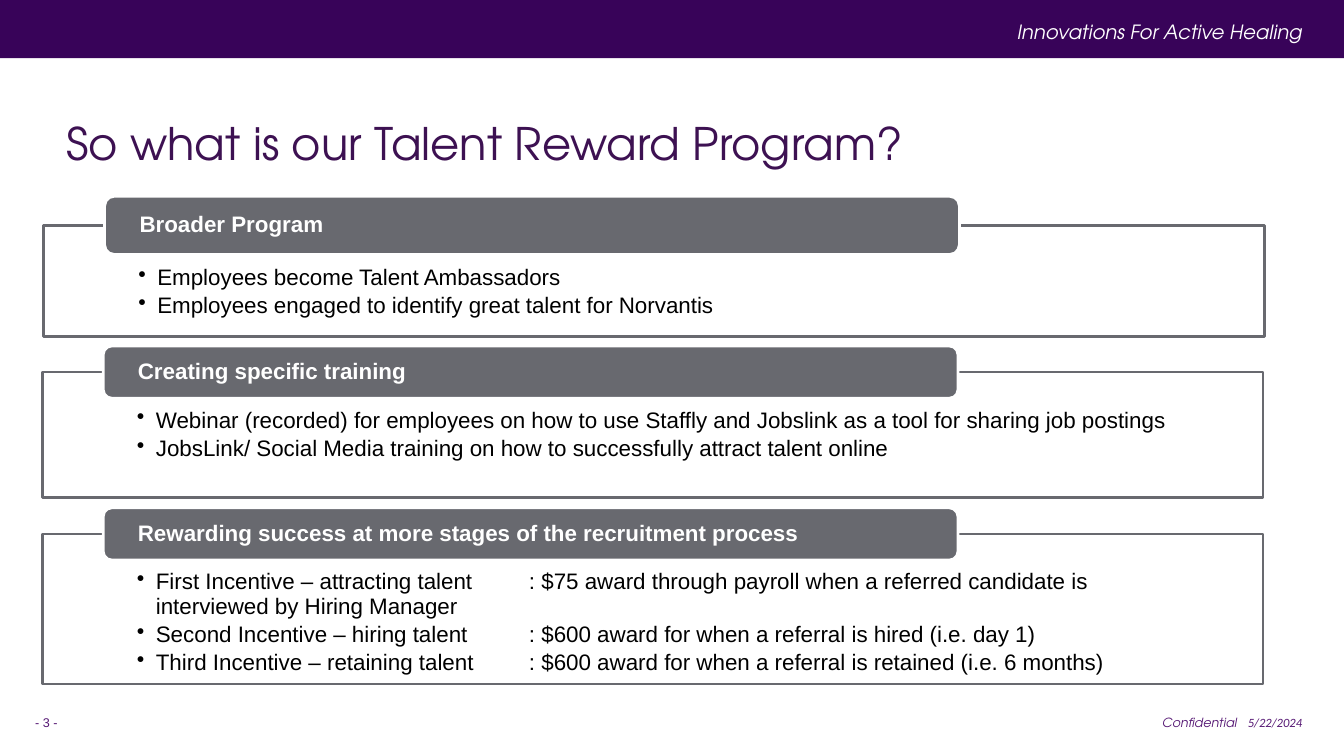
from dataclasses import dataclass

from lxml import etree
from pptx import Presentation
from pptx.dml.color import RGBColor
from pptx.enum.shapes import MSO_SHAPE
from pptx.enum.text import MSO_ANCHOR, PP_ALIGN
from pptx.oxml.ns import qn
from pptx.util import Pt

RECT, ROUNDED = MSO_SHAPE.RECTANGLE, MSO_SHAPE.ROUNDED_RECTANGLE
TOP, MIDDLE = MSO_ANCHOR.TOP, MSO_ANCHOR.MIDDLE
LEFT, RIGHT = PP_ALIGN.LEFT, PP_ALIGN.RIGHT


@dataclass(frozen=True)
class Theme:
    banner: str = "380359"
    title: str = "3D1152"
    footer: str = "561874"
    gray: str = "68696F"
    white: str = "FFFFFF"
    black: str = "000000"
    display: str = "TeX Gyre Adventor"
    body: str = "Arial"
    date: str = "Calibri"
    title_size: float = 32
    body_size: float = 16
    tagline_size: float = 14
    footer_size: float = 9


class SlideBuilder:
    def __init__(self, slide, theme):
        self.slide, self.theme = slide, theme

    def block(self, kind, box, fill, line=None):
        """Draw a flat shape with an optional two-point outline."""
        shape = self.slide.shapes.add_shape(kind, *map(Pt, box))
        shape.shadow.inherit = False
        shape.fill.solid()
        shape.fill.fore_color.rgb = RGBColor.from_string(fill)
        if line:
            shape.line.color.rgb = RGBColor.from_string(line)
            shape.line.width = Pt(2)
        else:
            shape.line.fill.background()
        return shape

    def frame(self, shape, anchor, margins=(7.2, 3.6, 7.2, 3.6), wrap=True):
        left, top, right, bottom = map(Pt, margins)
        formats = {
            "word_wrap": wrap, "vertical_anchor": anchor,
            "margin_left": left, "margin_top": top,
            "margin_right": right, "margin_bottom": bottom,
        }
        for name, value in formats.items():
            setattr(shape.text_frame, name, value)
        return shape.text_frame

    def add_words(self, paragraph, text, size, color, font, align=LEFT, **styles):
        paragraph.alignment = align
        run = paragraph.add_run()
        run.text = text
        for name, value in {"size": Pt(size), "name": font, **styles}.items():
            setattr(run.font, name, value)
        run.font.color.rgb = RGBColor.from_string(color)

    def label(self, box, text, size, color, font, anchor=MIDDLE, wrap=True, **styles):
        """Place a single line of free text."""
        shape = self.slide.shapes.add_textbox(*map(Pt, box))
        frame = self.frame(shape, anchor, wrap=wrap)
        self.add_words(frame.paragraphs[0], text, size, color, font, **styles)

    def bullet(self, paragraph, text):
        theme = self.theme
        paragraph.line_spacing = 0.9
        paragraph.space_after = Pt(3)
        props = paragraph._p.get_or_add_pPr()
        props.set("marL", str(Pt(13.5)))
        props.set("indent", str(Pt(-13.5)))
        etree.SubElement(props, qn("a:buChar"), char="•")
        if "\t" in text:
            stops = etree.SubElement(props, qn("a:tabLst"))
            etree.SubElement(stops, qn("a:tab"), pos=str(Pt(280)), algn="l")
        self.add_words(paragraph, text, theme.body_size, theme.black, theme.body)

    def section(self, left, top, height, header_height, heading, points):
        """Draw an outlined panel whose header straddles its top edge."""
        theme = self.theme
        panel = self.block(RECT, (left, top, 872, height), theme.white, theme.gray)
        color = panel._element.spPr.find(qn("a:solidFill"))[0]
        etree.SubElement(color, qn("a:alpha"), val="90000")
        frame = self.frame(panel, TOP, (67.7, header_height * 0.7, 67.7, 8.6))
        for index, point in enumerate(points):
            paragraph = frame.add_paragraph() if index else frame.paragraphs[0]
            self.bullet(paragraph, point)

        header_box = (left + 43.5, top - header_height / 2, 610.6, header_height)
        header = self.block(ROUNDED, header_box, theme.gray, theme.white)
        line = self.frame(header, MIDDLE, (23, 0, 23, 0)).paragraphs[0]
        line.line_spacing = 0.9
        self.add_words(line, heading, theme.body_size, theme.white, theme.body, bold=True)


# Left, top, height, header height, heading, points
SECTIONS = [
    (31.2, 161, 79.2, 41.6, "Broader Program", [
        "Employees become Talent Ambassadors",
        "Employees engaged to identify great talent for Norvantis",
    ]),
    (30.2, 265.8, 89.4, 37.4, "Creating specific training", [
        "Webinar (recorded) for employees on how to use Staffly and Jobslink "
        "as a tool for sharing job postings",
        "JobsLink/ Social Media training on how to successfully attract talent online",
    ]),
    (30.2, 381.4, 107.2, 37.4,
     "Rewarding success at more stages of the recruitment process", [
         "First Incentive – attracting talent\t: $75 award through payroll when "
         "a referred candidate is interviewed by Hiring Manager",
         "Second Incentive – hiring talent\t: $600 award for when a referral "
         "is hired (i.e. day 1)",
         "Third Incentive – retaining talent\t: $600 award for when a referral "
         "is retained (i.e. 6 months)",
     ]),
]


def main():
    deck = Presentation()
    deck.slide_width, deck.slide_height = Pt(960), Pt(540)
    theme = Theme()
    page = SlideBuilder(deck.slides.add_slide(deck.slide_layouts[6]), theme)

    # Banner
    page.block(RECT, (0, 0, 960, 41.6), theme.banner)
    page.label((545.8, 10.8, 391.7, 24.2), "Innovations For Active Healing",
               theme.tagline_size, theme.white, theme.display,
               anchor=TOP, align=RIGHT, italic=True)

    # Title
    page.label((40.3, 56.9, 872, 90), "So what is our Talent Reward Program?",
               theme.title_size, theme.title, theme.display)

    # Program sections
    for section in SECTIONS:
        page.section(*section)

    # Footer
    footer = (theme.footer_size, theme.footer)
    page.label((18, 501.8, 56.2, 28.8), "- 3 -", *footer, theme.body)
    page.label((823, 506.9, 68.4, 18), "Confidential", *footer, theme.display,
               anchor=TOP, wrap=False, italic=True)
    page.label((884.2, 501.8, 69.8, 28.8), "5/22/2024", *footer, theme.date,
               italic=True)

    deck.save("out.pptx")


if __name__ == "__main__":
    main()
